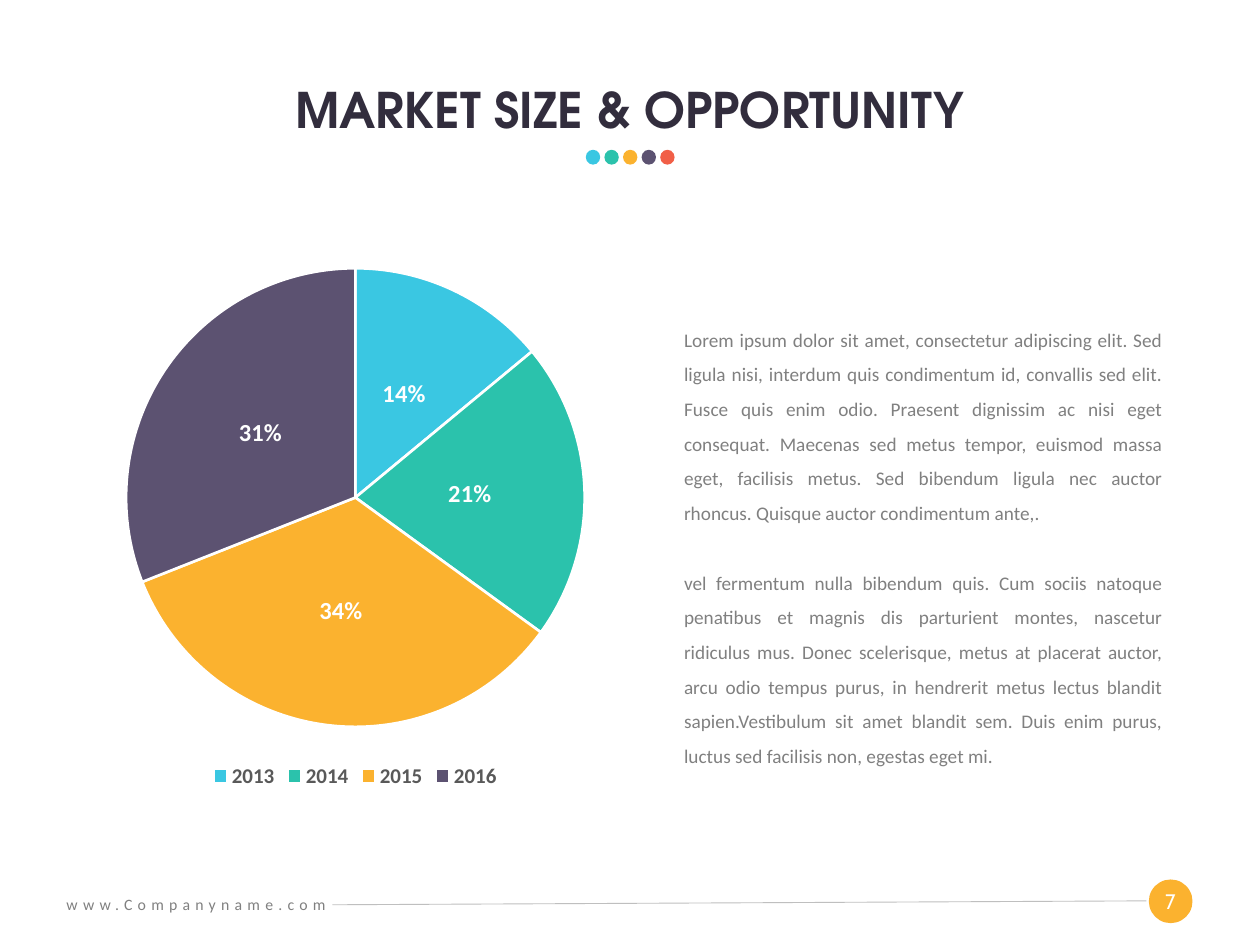
from lxml import etree
from pptx import Presentation
from pptx.chart.data import CategoryChartData
from pptx.dml.color import RGBColor
from pptx.enum.chart import XL_CHART_TYPE, XL_LABEL_POSITION, XL_LEGEND_POSITION
from pptx.enum.shapes import MSO_CONNECTOR, MSO_SHAPE
from pptx.enum.text import MSO_ANCHOR, PP_ALIGN
from pptx.oxml import parse_xml
from pptx.oxml.ns import nsdecls, qn
from pptx.util import Cm, Pt

PIE = XL_CHART_TYPE.PIE
MIDDLE = XL_LABEL_POSITION.CENTER
BELOW = XL_LEGEND_POSITION.BOTTOM
LINE = MSO_CONNECTOR.STRAIGHT
OVAL = MSO_SHAPE.OVAL
ROUND = MSO_SHAPE.ROUNDED_RECTANGLE
BOTTOM, TOP = MSO_ANCHOR.BOTTOM, MSO_ANCHOR.TOP
LEFT, CENTER, JUSTIFY = PP_ALIGN.LEFT, PP_ALIGN.CENTER, PP_ALIGN.JUSTIFY

COLORS = {
    "blue": "3AC7E2", "teal": "2BC2AC", "amber": "FBB22F", "plum": "5C5271",
    "coral": "F15F47", "title": "322D3D", "text": "808080", "legend": "595959",
    "rule": "BFBFBF", "white": "FFFFFF", "black": "000000",
}
RGB = {name: RGBColor.from_string(code) for name, code in COLORS.items()}

BODY = [
    "Lorem ipsum dolor sit amet, consectetur adipiscing elit. Sed ligula nisi, "
    "interdum quis condimentum id, convallis sed elit. Fusce quis enim odio. "
    "Praesent dignissim ac nisi eget consequat. Maecenas sed metus tempor, euismod "
    "massa eget, facilisis metus. Sed bibendum ligula nec auctor rhoncus. Quisque "
    "auctor condimentum ante,.",
    "vel fermentum nulla bibendum quis. Cum sociis natoque penatibus et magnis dis "
    "parturient montes, nascetur ridiculus mus. Donec scelerisque, metus at placerat "
    "auctor, arcu odio tempus purus, in hendrerit metus lectus blandit "
    "sapien.Vestibulum sit amet blandit sem. Duis enim purus, luctus sed facilisis "
    "non, egestas eget mi.",
]

deck = Presentation()
deck.slide_width, deck.slide_height = Cm(25.4), Cm(19.05)
slide = deck.slides.add_slide(deck.slide_layouts[6])
shapes = slide.shapes


def style(font, size, color, bold=False, face="Calibri"):
    font.name, font.size, font.bold = face, Pt(size), bold
    font.color.rgb = RGB[color]


def add_text(box, texts, size, color, align=LEFT, anchor=TOP, space=1.0, **look):
    frame = shapes.add_textbox(*map(Cm, box)).text_frame
    frame.word_wrap = True
    frame.vertical_anchor = anchor
    for i, text in enumerate(texts):
        para = frame.paragraphs[0] if i == 0 else frame.add_paragraph()
        para.text = text
        para.alignment, para.line_spacing = align, space
        style(para.font, size, color, **look)
    return frame


# Footer: page badge, rule and web address
badge = shapes.add_shape(ROUND, Cm(23.16), Cm(17.73), Cm(0.88), Cm(0.88))
badge.adjustments[0] = 0.5
badge.fill.solid()
badge.fill.fore_color.rgb = RGB["amber"]
badge.line.fill.background()
badge.shadow.inherit = False
page = add_text((23.11, 17.78, 0.97, 0.76), ["7"], 12, "white", CENTER, face="Cabin")
page.word_wrap = False

rule = shapes.add_connector(LINE, Cm(6.7), Cm(18.24), Cm(23.11), Cm(18.16))
rule.line.color.rgb = RGB["rule"]
rule.line.width = Pt(0.5)
etree.SubElement(rule._element.spPr, qn("a:effectLst"))

site = add_text((1.09, 17.91, 8.13, 0.64), ["www.Companyname.com"], 9, "text")
site.paragraphs[0].runs[0]._r.get_or_add_rPr().set("spc", "300")

# Title with its row of dots
add_text((0, 0.71, 25.4, 2.21), ["MARKET SIZE & OPPORTUNITY"], 28, "title",
         CENTER, BOTTOM, 0.9, bold=True, face="TeX Gyre Adventor")
for i, name in enumerate(["blue", "teal", "amber", "plum", "coral"]):
    dot = shapes.add_shape(OVAL, Cm(11.81 + 0.375 * i), Cm(3.02), Cm(0.29), Cm(0.3))
    dot.fill.solid()
    dot.fill.fore_color.rgb = RGB[name]
    dot.line.fill.background()
    dot.shadow.inherit = False

# Body text
body = add_text((13.54, 6.25, 10.31, 9.32), BODY, 11, "text", JUSTIFY, space=1.5)
body.margin_right, body.margin_bottom = Cm(0.41), Cm(0.1)
body.paragraphs[1].space_before = Pt(20)

# Pie chart
data = CategoryChartData()
data.categories = ["2013", "2014", "2015", "2016"]
data.add_series("Series 1", [14, 21, 34, 31])
chart = shapes.add_chart(PIE, Cm(-1.09), Cm(5.05), Cm(16.51), Cm(10.95), data).chart
chart.has_title = False
style(chart.font, 10, "black")
chart.has_legend = True
chart.legend.position = BELOW
chart.legend.include_in_layout = False
style(chart.legend.font, 12, "legend", bold=True)

plot = chart.plots[0]
plot.vary_by_categories = True
for i, name in enumerate(["blue", "teal", "amber", "plum"]):
    form = plot.series[0].points[i].format
    form.fill.solid()
    form.fill.fore_color.rgb = RGB[name]
    form.line.color.rgb = RGB["white"]
    form.line.width = Pt(1.5)

plot.has_data_labels = True
labels = plot.data_labels
labels.show_percentage, labels.show_value = True, False
labels.number_format, labels.number_format_is_linked = "0%", False
labels.position = MIDDLE
style(labels.font, 14, "white", bold=True)

# Fixed place of the pie, as shares of the chart frame
area = chart._chartSpace.chart.plotArea
for old in area.findall(qn("c:layout")):
    area.remove(old)
sides = {"x": 0.22, "y": 0.03, "w": 0.56, "h": 0.85}
place = "".join(f'<c:{side} val="{share}"/>' for side, share in sides.items())
area.insert(0, parse_xml(
    f'<c:layout {nsdecls("c")}><c:manualLayout><c:layoutTarget val="inner"/>'
    f'<c:xMode val="edge"/><c:yMode val="edge"/>{place}</c:manualLayout></c:layout>'))

deck.save("out.pptx")
